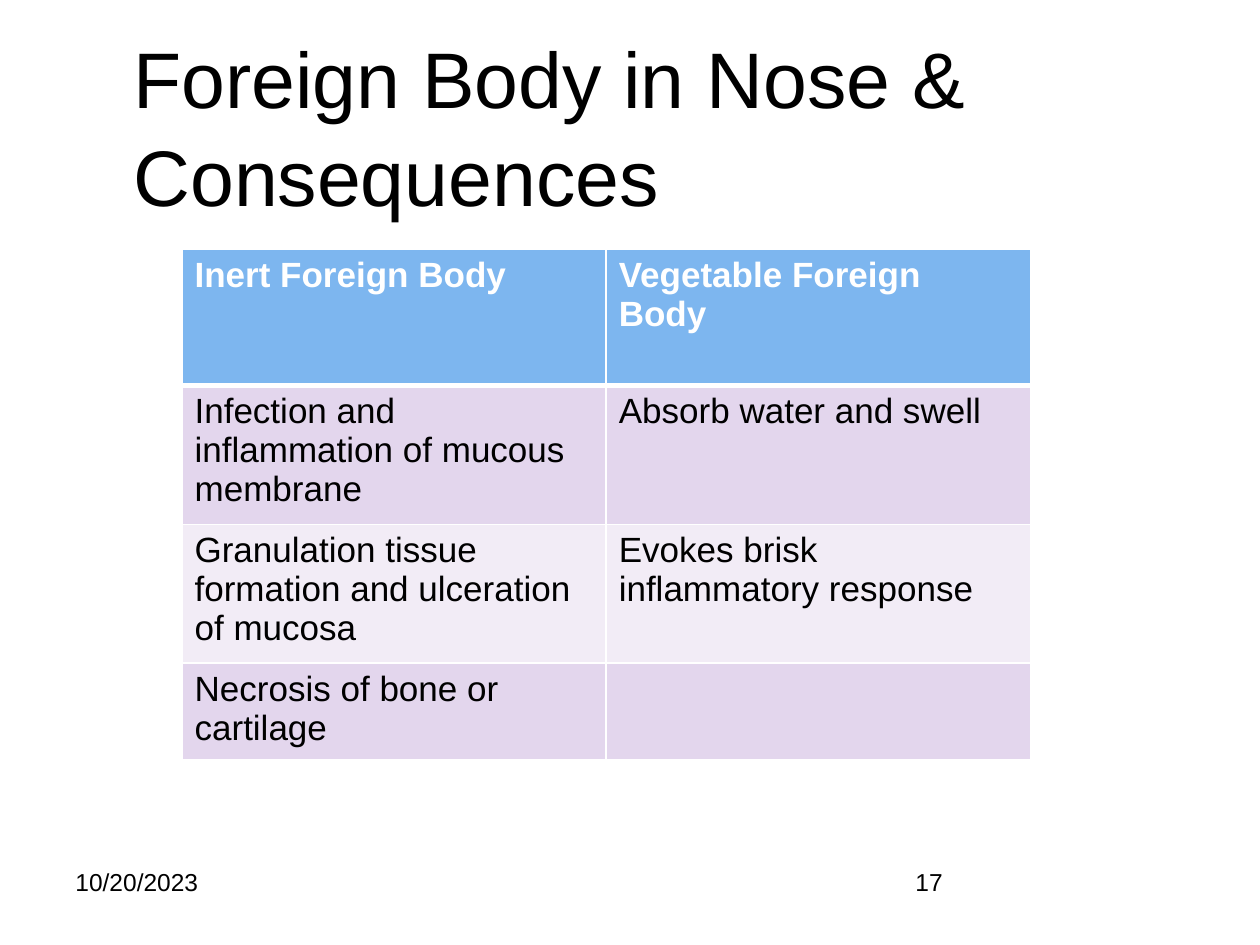
from lxml.etree import SubElement
from pptx import Presentation
from pptx.dml.color import RGBColor
from pptx.enum.text import MSO_ANCHOR, MSO_AUTO_SIZE, PP_ALIGN
from pptx.oxml.ns import qn
from pptx.util import Pt

TITLE = "Foreign Body in Nose & Consequences"
ROWS = [
    ("Inert Foreign Body", "Vegetable Foreign Body"),
    ("Infection and inflammation of mucous membrane", "Absorb water and swell"),
    ("Granulation tissue formation and ulceration of mucosa",
     "Evokes brisk inflammatory response"),
    ("Necrosis of bone or cartilage", ""),
]
FOOTERS = [("10/20/2023", 36), ("17", 516)]  # text, left

ROW_HEIGHTS = [77.8, 65.5, 65.5, 48.2]
COLUMN_WIDTH = 242.4
TABLE_LEFT, TABLE_TOP = 104, 142.6
COLORS = {"text": "000000", "header text": "FFFFFF", "header": "7DB6EF",
          "odd row": "E3D6ED", "even row": "F2ECF6", "border": "FFFFFF"}


def add_span(para, text, size, color="text", bold=False):
    span = para.add_run()
    span.text = text
    font = span.font
    font.name, font.size, font.bold = "Arial", Pt(size), bold
    font.color.rgb = RGBColor.from_string(COLORS[color])


def set_border(cell, side, width):
    line = SubElement(cell._tc.get_or_add_tcPr(), qn(f"a:{side}"), w=str(Pt(width)))
    fill = SubElement(line, qn("a:solidFill"))
    SubElement(fill, qn("a:srgbClr"), val=COLORS["border"])


def add_title(slide):
    title = slide.shapes.title
    title.left, title.top, title.width, title.height = Pt(69), Pt(90), Pt(577.5), Pt(44)
    frame = title.text_frame
    frame.word_wrap = True
    frame.auto_size = MSO_AUTO_SIZE.NONE
    frame.vertical_anchor = MSO_ANCHOR.BOTTOM
    frame.margin_left = frame.margin_right = Pt(7.2)
    frame.margin_top = frame.margin_bottom = Pt(7.2)
    para = frame.paragraphs[0]
    para.alignment = PP_ALIGN.LEFT
    para.line_spacing = 1.03
    add_span(para, TITLE, 45)


def add_comparison(slide):
    columns = len(ROWS[0])
    table = slide.shapes.add_table(
        len(ROWS), columns, Pt(TABLE_LEFT), Pt(TABLE_TOP),
        Pt(COLUMN_WIDTH * columns), Pt(sum(ROW_HEIGHTS))).table
    for column in table.columns:
        column.width = Pt(COLUMN_WIDTH)
    for r, (texts, height) in enumerate(zip(ROWS, ROW_HEIGHTS)):
        table.rows[r].height = Pt(height)
        header = r == 0
        fill = "header" if header else "odd row" if r % 2 else "even row"
        for c, text in enumerate(texts):
            cell = table.cell(r, c)
            for side in ("lnL", "lnR", "lnT", "lnB"):
                thick = (r, side) in ((0, "lnB"), (1, "lnT"))
                set_border(cell, side, 3 if thick else 1)
            cell.fill.solid()
            cell.fill.fore_color.rgb = RGBColor.from_string(COLORS[fill])
            if text:
                add_span(cell.text_frame.paragraphs[0], text, 20,
                         "header text" if header else "text", header)


def add_footers(slide):
    for text, left in FOOTERS:
        box = slide.shapes.add_textbox(Pt(left), Pt(491.8), Pt(168), Pt(37.4))
        frame = box.text_frame
        frame.word_wrap = True
        para = frame.paragraphs[0]
        para.alignment = PP_ALIGN.LEFT
        add_span(para, text, 14)


def main():
    deck = Presentation()
    deck.slide_width, deck.slide_height = Pt(720), Pt(540)
    slide = deck.slides.add_slide(deck.slide_layouts[5])
    add_title(slide)
    add_footers(slide)
    add_comparison(slide)
    deck.save("out.pptx")


if __name__ == "__main__":
    main()
